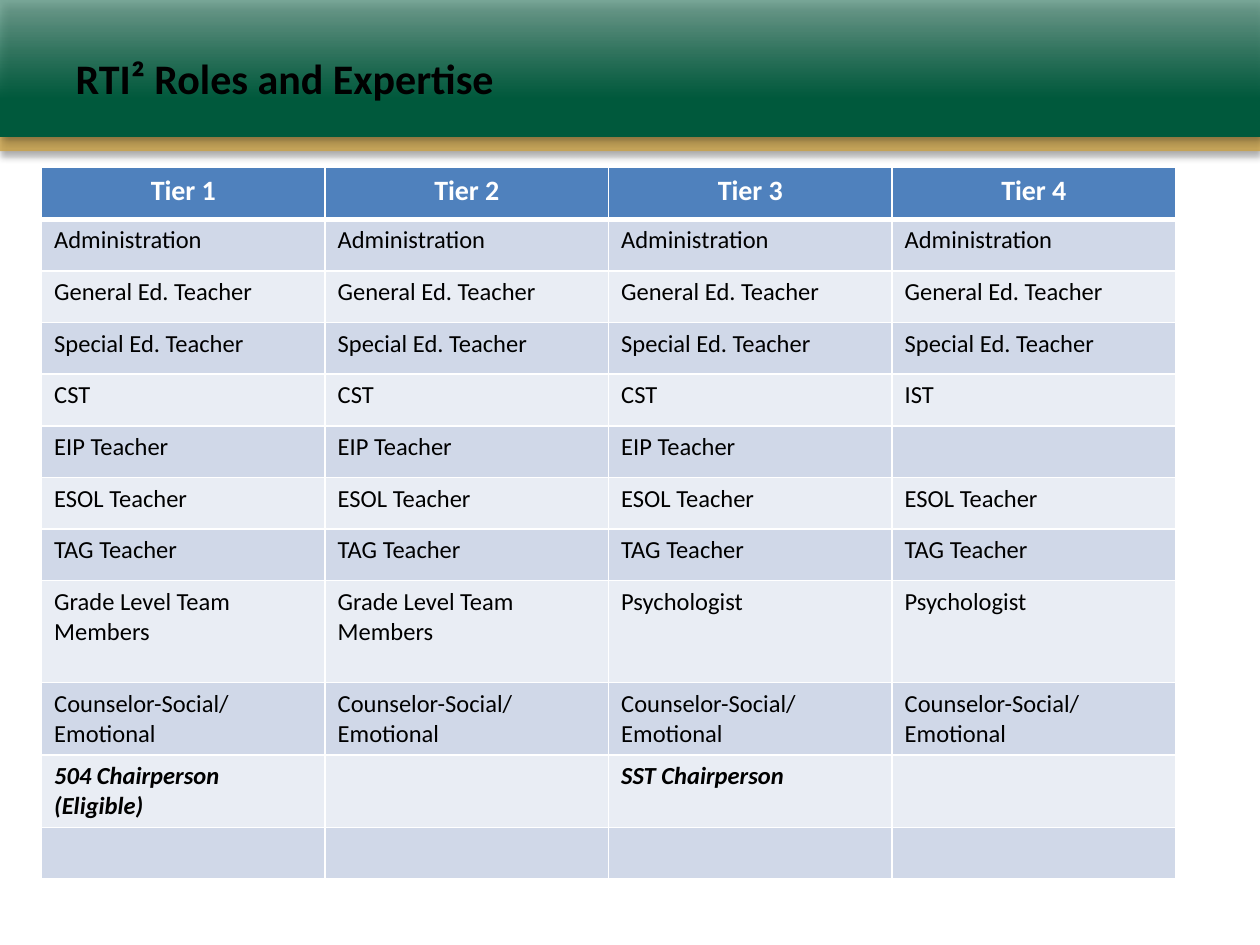
"""Build the slide of roles and expertise by tier."""
from pptx import Presentation
from pptx.dml.color import RGBColor
from pptx.enum import shapes, text
from pptx.oxml import parse_xml
from pptx.oxml.ns import nsdecls
from pptx.util import Inches, Pt

BLACK = RGBColor(0x00, 0x00, 0x00)
WHITE = RGBColor(0xFF, 0xFF, 0xFF)
GREEN = RGBColor(0x00, 0x59, 0x3C)
GOLD = RGBColor(0xC9, 0x9F, 0x41)
BLUE = RGBColor(0x4F, 0x81, 0xBD)
BANDS = (RGBColor(0xE9, 0xED, 0xF4), RGBColor(0xD0, 0xD8, 0xE8))

TITLE = {"name": "Calibri", "size": Pt(24), "bold": True}
HEAD = {"name": "Calibri", "size": Pt(16), "bold": True}
BODY = {"name": "Calibri", "size": Pt(14), "bold": False}
CHAIR = {**BODY, "bold": True, "italic": True}

ROWS = [
    [f"Tier {n}" for n in range(1, 5)],
    ["Administration"] * 4,
    ["General Ed. Teacher"] * 4,
    ["Special Ed. Teacher"] * 4,
    ["CST"] * 3 + ["IST"],
    ["EIP Teacher"] * 3 + [""],
    ["ESOL Teacher"] * 4,
    ["TAG Teacher"] * 4,
    ["Grade Level Team Members"] * 2 + ["Psychologist"] * 2,
    ["Counselor-Social/Emotional"] * 4,
    ["504 Chairperson (Eligible)", "", "SST Chairperson", ""],
    [""] * 4,
]
TEAM_ROW, CHAIR_ROW = 8, 10


def style_font(font, style, color):
    """Apply a dict of font values and a colour."""
    for key, value in style.items():
        setattr(font, key, value)
    font.color.rgb = color


def color_xml(color, alpha=100):
    """Return a colour element with its opacity in percent."""
    return f'<a:srgbClr val="{color}"><a:alpha val="{alpha * 1000}"/></a:srgbClr>'


def add_band(slide, top, height, color):
    """Add a full-width rectangle without outline."""
    sp = slide.shapes.add_shape(shapes.MSO_SHAPE.RECTANGLE, 0, Inches(top),
                                Inches(10), Inches(height))
    sp.shadow.inherit = False
    sp.line.fill.background()
    sp.fill.solid()
    sp.fill.fore_color.rgb = color
    return sp


def set_fill(sp, xml):
    """Replace the solid fill of a shape."""
    old = sp._element.spPr.find(".//{*}solidFill")
    old.getparent().replace(old, parse_xml(xml))


def set_shadow(sp, alpha, blur, dist, angle):
    """Give a shape a black outer shadow."""
    effects = sp._element.spPr.find("{*}effectLst")
    effects.append(parse_xml(
        f'<a:outerShdw {nsdecls("a")} blurRad="{Pt(blur)}" dist="{Pt(dist)}" '
        f'dir="{angle * 60000}" rotWithShape="0">{color_xml(BLACK, alpha)}</a:outerShdw>'))


def add_banner(slide):
    """Add the gold stripe and the fading green banner."""
    stripe = add_band(slide, 1, 0.2, GOLD)
    set_fill(stripe, f'<a:solidFill {nsdecls("a")}>{color_xml(GOLD, 79)}</a:solidFill>')
    set_shadow(stripe, 40, 4, 3, 90)
    add_band(slide, 0, 1.07, WHITE)
    banner = add_band(slide, 0, 1.08, GREEN)
    stops = "".join(f'<a:gs pos="{pos * 1000}">{color_xml(GREEN, alpha)}</a:gs>'
                    for pos, alpha in ((14, 100), (27, 100), (95, 51)))
    set_fill(banner, f'<a:gradFill {nsdecls("a")} rotWithShape="1"><a:gsLst>{stops}'
                     '</a:gsLst><a:lin ang="16200000" scaled="0"/></a:gradFill>')
    set_shadow(banner, 30, 4.5, 2.6, 53)


def add_title(slide, words):
    """Fill the title placeholder and bring it in front of the banner."""
    title = slide.shapes.title
    box = {"left": 0.5, "top": 0.33, "width": 3.58, "height": 0.58}
    for key, value in box.items():
        setattr(title, key, Inches(value))
    tf = title.text_frame
    tf.text = words
    tf.word_wrap = False
    tf.auto_size = text.MSO_AUTO_SIZE.NONE
    tf.vertical_anchor = text.MSO_ANCHOR.MIDDLE
    p = tf.paragraphs[0]
    p.alignment = text.PP_ALIGN.LEFT
    style_font(p.runs[0].font, TITLE, BLACK)
    slide.shapes._spTree.append(title._element)


def set_borders(cell, top, bottom):
    """Draw white borders round a cell."""
    tcPr = cell._tc.get_or_add_tcPr()
    for side, width in (("L", 1), ("R", 1), ("T", top), ("B", bottom)):
        tcPr.append(parse_xml(
            f'<a:ln{side} {nsdecls("a")} w="{Pt(width)}"><a:solidFill>'
            f'{color_xml(WHITE)}</a:solidFill></a:ln{side}>'))


def fill_cell(cell, words, row):
    """Write and format one table cell."""
    is_head = row == 0
    set_borders(cell, 3 if row == 1 else 1, 3 if is_head else 1)
    cell.fill.solid()
    cell.fill.fore_color.rgb = BLUE if is_head else BANDS[row % 2]
    if not words:
        return
    p = cell.text_frame.paragraphs[0]
    p.alignment = text.PP_ALIGN.CENTER if is_head else text.PP_ALIGN.LEFT
    r = p.add_run()
    r.text = words
    style = HEAD if is_head else CHAIR if row == CHAIR_ROW else BODY
    style_font(r.font, style, WHITE if is_head else BLACK)


def add_roles_table(slide):
    """Add the table of roles for each tier."""
    table = slide.shapes.add_table(len(ROWS), len(ROWS[0]), Inches(0.33), Inches(1.33),
                                   Inches(9), Inches(5.59)).table
    for i, words in enumerate(ROWS):
        table.rows[i].height = Inches(0.81 if i == TEAM_ROW else 0.41)
        for j, word in enumerate(words):
            fill_cell(table.cell(i, j), word, i)


def main():
    """Build and save the presentation."""
    prs = Presentation()
    prs.slide_width, prs.slide_height = Inches(10), Inches(7.5)
    slide = prs.slides.add_slide(prs.slide_layouts[5])
    add_banner(slide)
    add_title(slide, "RTI² Roles and Expertise")
    add_roles_table(slide)
    prs.save("out.pptx")


if __name__ == "__main__":
    main()
